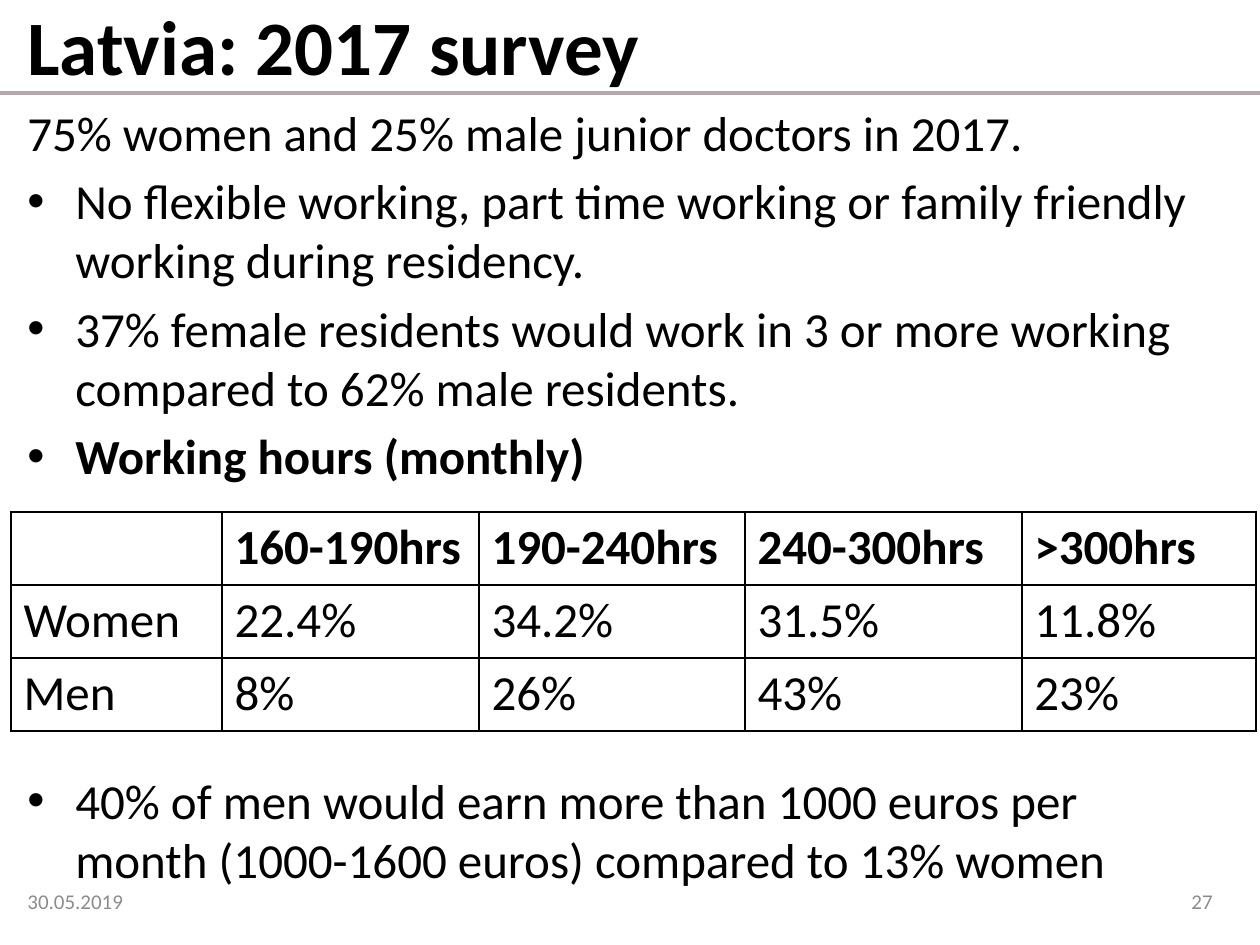
from lxml.etree import SubElement
from pptx import Presentation
from pptx.dml.color import RGBColor
from pptx.enum.shapes import MSO_CONNECTOR
from pptx.enum.text import MSO_ANCHOR, PP_ALIGN
from pptx.oxml.ns import qn
from pptx.util import Pt

BLACK = RGBColor(0x00, 0x00, 0x00)
WHITE = RGBColor(0xFF, 0xFF, 0xFF)
GREY = RGBColor(0x8C, 0x8C, 0x8C)
RULE = RGBColor(0xB3, 0xA9, 0xAA)
FONT = "Calibri"
BODY_SIZE = 28
INDENT = 48

INTRO = "75% women and 25% male junior doctors in 2017."
BULLETS = [
    "No flexible working, part time working or family friendly working during residency.",
    "37% female residents would work in 3 or more working compared to 62% male residents.",
]
TABLE_HEADING = "Working hours (monthly)"
EARNINGS = ("40% of men would earn more than 1000 euros per month "
            "(1000-1600 euros) compared to 13% women")
HOURS = [
    ["", "160-190hrs", "190-240hrs", "240-300hrs", ">300hrs"],
    ["Women", "22.4%", "34.2%", "31.5%", "11.8%"],
    ["Men", "8%", "26%", "43%", "23%"],
]
COLUMN_WIDTHS = [211, 257, 266, 277, 234]
ROW_HEIGHT = 73


def px(n):
    return round(n * 914400 / 126)


def style(p, size, color=BLACK, bold=False):
    for r in p.runs:
        r.font.name = FONT
        r.font.size = Pt(size)
        r.font.bold = bold
        r.font.color.rgb = color


def add_bullet(p):
    pPr = p._p.get_or_add_pPr()
    pPr.set("marL", str(px(INDENT)))
    pPr.set("indent", str(-px(INDENT)))
    SubElement(pPr, qn("a:buFont"), typeface="Arial")
    SubElement(pPr, qn("a:buChar"), char="•")


def add_box(slide, x, y, w, h, anchor):
    tf = slide.shapes.add_textbox(px(x), px(y), px(w), px(h)).text_frame
    tf.word_wrap = True
    tf.vertical_anchor = anchor
    return tf


def add_label(slide, text, x, y, w, h, size, color=BLACK, bold=False,
              align=PP_ALIGN.LEFT):
    p = add_box(slide, x, y, w, h, MSO_ANCHOR.MIDDLE).paragraphs[0]
    p.text = text
    p.alignment = align
    style(p, size, color, bold)


def add_body(slide, x, y, w, h, items):
    """Each item is (text, bulleted, bold)."""
    tf = add_box(slide, x, y, w, h, MSO_ANCHOR.TOP)
    for i, (text, bulleted, bold) in enumerate(items):
        p = tf.paragraphs[0] if i == 0 else tf.add_paragraph()
        p.text = text
        if i:
            p.space_before = Pt(BODY_SIZE * 0.2)
        if bulleted:
            add_bullet(p)
        style(p, BODY_SIZE, bold=bold)


def add_rule(slide, x1, x2, y):
    line = slide.shapes.add_connector(MSO_CONNECTOR.STRAIGHT,
                                      px(x1), px(y), px(x2), px(y))
    line.line.color.rgb = RULE
    line.line.width = Pt(2)
    SubElement(line._element.spPr, qn("a:effectLst"))


def add_borders(cell):
    tcPr = cell._tc.get_or_add_tcPr()
    for i, side in enumerate(("a:lnL", "a:lnR", "a:lnT", "a:lnB")):
        ln = tcPr.makeelement(qn(side), {"w": str(Pt(1))})
        fill = SubElement(ln, qn("a:solidFill"))
        SubElement(fill, qn("a:srgbClr"), val=str(BLACK))
        tcPr.insert(i, ln)


def add_table(slide, x, y, rows, widths):
    table = slide.shapes.add_table(len(rows), len(widths), px(x), px(y),
                                   px(sum(widths)),
                                   px(ROW_HEIGHT * len(rows))).table
    for column, width in zip(table.columns, widths):
        column.width = px(width)
    for i, values in enumerate(rows):
        table.rows[i].height = px(ROW_HEIGHT)
        for j, value in enumerate(values):
            cell = table.cell(i, j)
            cell.text = value
            cell.fill.solid()
            cell.fill.fore_color.rgb = WHITE
            add_borders(cell)
            style(cell.text_frame.paragraphs[0], BODY_SIZE, bold=i == 0)


def main():
    prs = Presentation()
    prs.slide_width, prs.slide_height = px(1260), px(945)
    s = prs.slides.add_slide(prs.slide_layouts[6])

    # Title and rule
    add_rule(s, -24, 1265, 93)
    add_label(s, "Latvia: 2017 survey", 15, -14, 785, 117, 44, bold=True)

    # Findings above and below the table
    findings = [(INTRO, False, False)]
    findings += [(text, True, False) for text in BULLETS]
    findings.append((TABLE_HEADING, True, True))
    add_body(s, 15, 96, 1211, 400, findings)
    add_body(s, 15, 764, 1211, 132, [(EARNINGS, True, False)])

    # Footer
    add_label(s, "30.05.2019", 15, 876, 294, 50, 12, GREY)
    add_label(s, "27", 931, 876, 294, 50, 12, GREY, align=PP_ALIGN.RIGHT)

    # Working hours
    add_table(s, 11, 512, HOURS, COLUMN_WIDTHS)

    prs.save("out.pptx")


if __name__ == "__main__":
    main()
